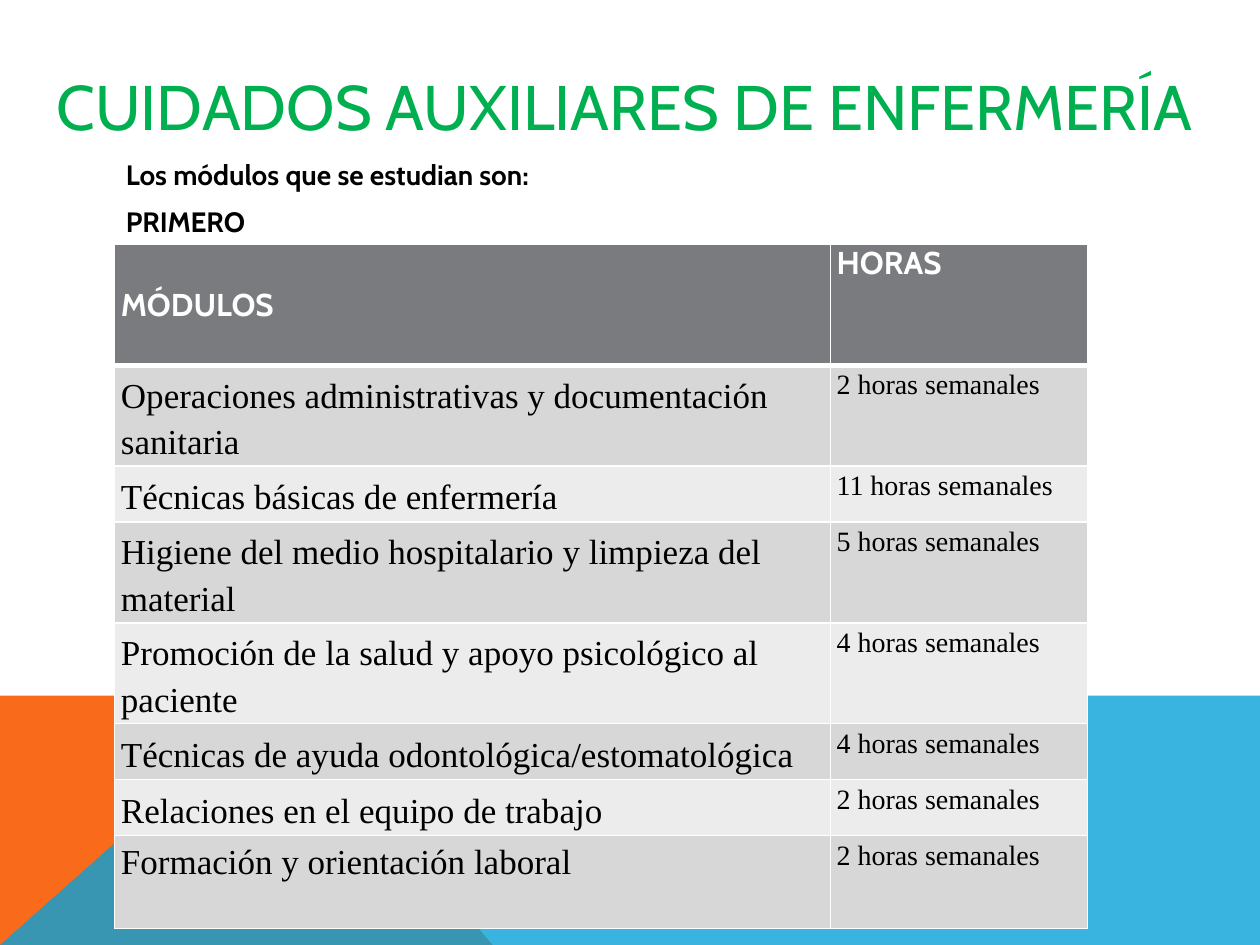
from dataclasses import dataclass

import pptx
import pptx.dml.color
import pptx.enum.text
import pptx.oxml
import pptx.oxml.ns
import pptx.util
from lxml import etree

Pt = pptx.util.Pt
RGBColor = pptx.dml.color.RGBColor
Anchor = pptx.enum.text.MSO_ANCHOR

WHITE = RGBColor(0xFF, 0xFF, 0xFF)
BLACK = RGBColor(0x00, 0x00, 0x00)
GREEN = RGBColor(0x00, 0xB0, 0x50)
ORANGE = RGBColor(0xF9, 0x6A, 0x1B)
BLUE = RGBColor(0x08, 0xA1, 0xD9)
HEADER = RGBColor(0x79, 0x7B, 0x7E)
BANDS = (RGBColor(0xD7, 0xD7, 0xD8), RGBColor(0xEC, 0xEC, 0xEC))

TITLE = dict(size=Pt(36), name="Cabin", bold=False)
INTRO = dict(size=Pt(16), name="Cabin", bold=True)
HEAD = dict(size=Pt(18), name="Cabin", bold=True)
MODULE = dict(size=Pt(20), name="Times New Roman", bold=False)
HOURS = dict(size=Pt(16), name="Times New Roman", bold=False)


@dataclass
class Module:
    name: str
    hours: int
    height: float
    anchor: Anchor = Anchor.MIDDLE


MODULES = [
    Module("Operaciones administrativas y documentación sanitaria", 2, 53),
    Module("Técnicas básicas de enfermería", 11, 32),
    Module("Higiene del medio hospitalario y limpieza del material", 5, 53),
    Module("Promoción de la salud y apoyo psicológico al paciente", 4, 53),
    Module("Técnicas de ayuda odontológica/estomatológica", 4, 32),
    Module("Relaciones en el equipo de trabajo", 2, 32),
    Module("Formación y orientación laboral", 2, 53, Anchor.TOP),
]


def write(p, text: str, fmt: dict, color: RGBColor) -> None:
    r = p.add_run()
    r.text = text
    for key, value in fmt.items():
        setattr(r.font, key, value)
    r.font.color.rgb = color


def add_polygon(s, points: list, color: RGBColor, alpha: int = 100) -> None:
    points = [(Pt(x), Pt(y)) for x, y in points]
    fb = s.shapes.build_freeform(*points[0], scale=1.0)
    fb.add_line_segments(points[1:], close=True)
    sp = fb.convert_to_shape()
    sp.shadow.inherit = False
    sp.line.fill.background()
    sp.fill.solid()
    sp.fill.fore_color.rgb = color
    if alpha < 100:
        clr = sp.fill._xPr.find(".//" + pptx.oxml.ns.qn("a:srgbClr"))
        etree.SubElement(clr, pptx.oxml.ns.qn("a:alpha"), val=str(alpha * 1000))


def add_text(s, box: tuple, lines: list, fmt: dict, color: RGBColor, anchor: Anchor) -> None:
    tf = s.shapes.add_textbox(*map(Pt, box)).text_frame
    tf.word_wrap = True
    tf.vertical_anchor = anchor
    for i, line in enumerate(lines):
        p = tf.add_paragraph() if i else tf.paragraphs[0]
        if i:
            p.space_before = Pt(8)
        write(p, line, fmt, color)


def fill_cell(cell, text: str, fmt: dict, color: RGBColor, fill: RGBColor,
              anchor: Anchor, spacing: float = 1.0, top: float = 1, bottom: float = 1) -> None:
    layout = dict(margin_left=Pt(3.6), margin_right=Pt(3.6), margin_top=0,
                  margin_bottom=0, vertical_anchor=anchor)
    for key, value in layout.items():
        setattr(cell, key, value)
    tcPr = cell._tc.get_or_add_tcPr()
    for side, width in dict(L=1, R=1, T=top, B=bottom).items():
        tcPr.append(pptx.oxml.parse_xml(
            f'<a:ln{side} {pptx.oxml.ns.nsdecls("a")} w="{Pt(width)}">'
            f'<a:solidFill><a:srgbClr val="{WHITE}"/></a:solidFill></a:ln{side}>'))
    cell.fill.solid()
    cell.fill.fore_color.rgb = fill
    p = cell.text_frame.paragraphs[0]
    p.line_spacing = spacing
    write(p, text, fmt, color)


def add_modules_table(s) -> None:
    heights = [69] + [m.height for m in MODULES]
    widths = (409, 147)
    tbl = s.shapes.add_table(len(heights), 2, Pt(65.5), Pt(139.7),
                             Pt(sum(widths)), Pt(sum(heights))).table
    tbl.horz_banding = False
    for col, width in zip(tbl.columns, widths):
        col.width = Pt(width)
    for row, height in zip(tbl.rows, heights):
        row.height = Pt(height)
    # Header row
    for i, (text, anchor) in enumerate((("MÓDULOS", Anchor.MIDDLE), ("HORAS", Anchor.TOP))):
        fill_cell(tbl.cell(0, i), text, HEAD, WHITE, HEADER, anchor, bottom=3)
    # Module rows
    for i, m in enumerate(MODULES):
        band = BANDS[i % 2]
        top = 1 if i else 3
        fill_cell(tbl.cell(i + 1, 0), m.name, MODULE, BLACK, band, m.anchor, 1.2, top)
        fill_cell(tbl.cell(i + 1, 1), f"{m.hours} horas semanales", HOURS, BLACK, band,
                  Anchor.TOP, 1.15, top)


def main() -> None:
    prs = pptx.Presentation()
    prs.slide_width, prs.slide_height = Pt(720), Pt(540)
    s = prs.slides.add_slide(prs.slide_layouts[6])

    # Bottom band
    add_polygon(s, [(0, 540), (0, 397.5), (160.5, 397.5), (281.5, 540)], ORANGE)
    add_polygon(s, [(0, 540), (160.5, 397.5), (720, 397.5), (720, 540)], BLUE, 80)

    # Title and introduction
    add_text(s, (25.2, 26, 680.4, 68.4), ["CUIDADOS AUXILIARES DE ENFERMERÍA"],
             TITLE, GREEN, Anchor.MIDDLE)
    add_text(s, (64.8, 86.4, 592, 281.5), ["Los módulos que se estudian son:", "PRIMERO"],
             INTRO, BLACK, Anchor.TOP)

    # Modules and weekly hours
    add_modules_table(s)
    prs.save("out.pptx")


if __name__ == "__main__":
    main()
